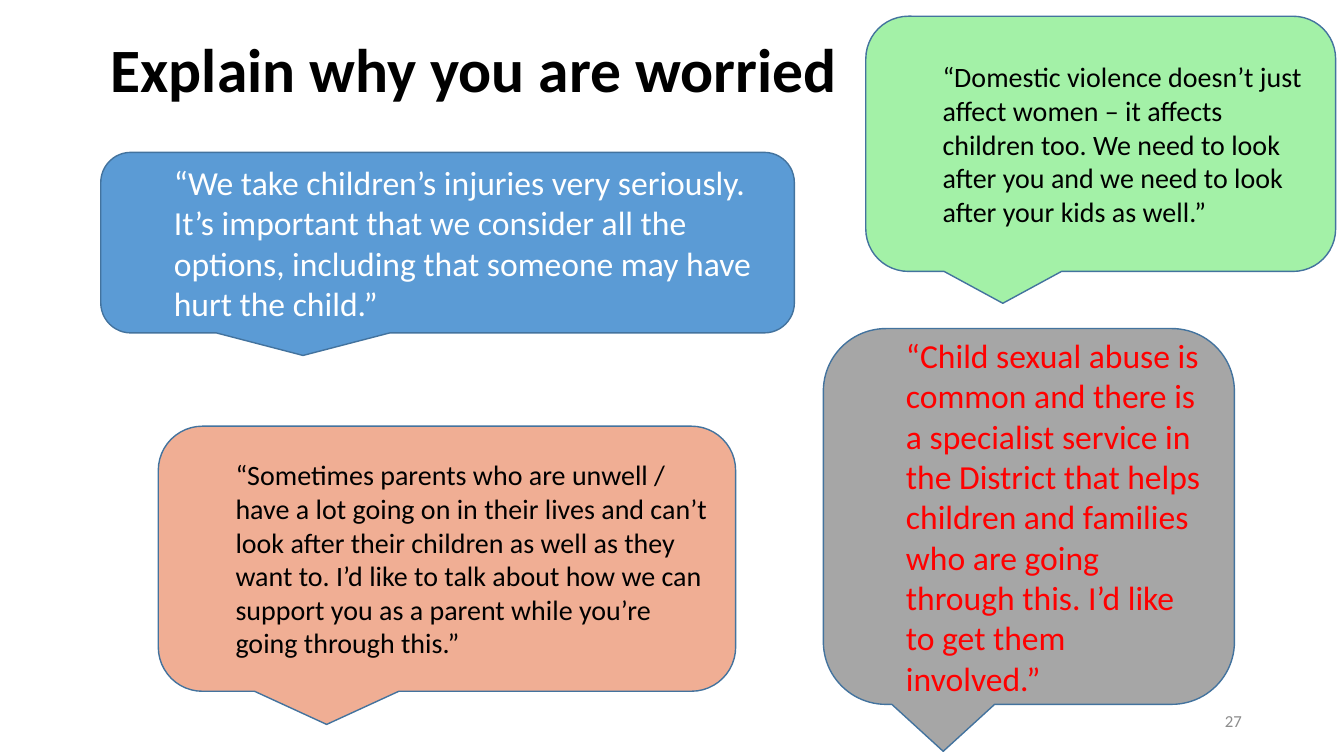
from dataclasses import dataclass

from pptx import Presentation
from pptx.dml.color import RGBColor
from pptx.enum.shapes import MSO_SHAPE
from pptx.enum.text import MSO_ANCHOR, PP_ALIGN
from pptx.slide import Slide
from pptx.util import Cm, Pt

CALLOUT = MSO_SHAPE.ROUNDED_RECTANGULAR_CALLOUT
MIDDLE = MSO_ANCHOR.MIDDLE
LEFT, RIGHT = PP_ALIGN.LEFT, PP_ALIGN.RIGHT

FONT = "Calibri"
INDENT = Cm(1.37)
COLORS = {
    "black": "000000",
    "white": "FFFFFF",
    "red": "FF0000",
    "number": "8C8C8C",
    "edge": "43739E",
    "blue": "5B9BD5",
    "green": "A3F1A7",
    "salmon": "F0AE94",
    "grey": "A6A6A6",
}


@dataclass
class Label:
    text: str
    box: tuple[float, float, float, float]
    size: int
    ink: str
    bold: bool = False
    align: PP_ALIGN = LEFT
    spacing: float = 1.0


@dataclass
class Quote(Label):
    fill: str = "blue"


LABELS = [
    Label("Explain why you are worried", (2.54, 0, 29.21, 3.68), 44, "black",
          bold=True, spacing=0.9),
    Label("27", (23.93, 17.65, 7.62, 1.02), 12, "number", align=RIGHT),
]

QUOTES = [
    Quote("“We take children’s injuries very seriously. It’s important that "
          "we consider all the options, including that someone may have hurt "
          "the child.”",
          (2.54, 3.84, 17.48, 4.55), 24, "white", fill="blue"),
    Quote("“Domestic violence doesn’t just affect women – it affects children "
          "too. We need to look after you and we need to look after your kids "
          "as well.”",
          (21.82, 0.41, 11.84, 6.43), 20, "black", fill="green"),
    Quote("“Sometimes parents who are unwell / have a lot going on in their "
          "lives and can’t look after their children as well as they want to. "
          "I’d like to talk about how we can support you as a parent while "
          "you’re going through this.”",
          (3.99, 10.74, 14.55, 6.68), 20, "black", fill="salmon"),
    Quote("“Child sexual abuse is common and there is a specialist service in "
          "the District that helps children and families who are going "
          "through this. I’d like to get them involved.”",
          (20.75, 8.28, 10.36, 9.47), 24, "red", fill="grey"),
]


def color(name: str) -> RGBColor:
    return RGBColor.from_string(COLORS[name])


def write(shape, label: Label) -> None:
    frame = shape.text_frame
    frame.word_wrap = True
    frame.vertical_anchor = MIDDLE
    para = frame.paragraphs[0]
    para.text = label.text
    para.alignment = label.align
    para.line_spacing = label.spacing
    para.font.name = FONT
    para.font.size = Pt(label.size)
    para.font.bold = label.bold
    para.font.color.rgb = color(label.ink)


def add_label(slide: Slide, label: Label) -> None:
    write(slide.shapes.add_textbox(*map(Cm, label.box)), label)


def add_quote(slide: Slide, quote: Quote) -> None:
    shape = slide.shapes.add_shape(CALLOUT, *map(Cm, quote.box))
    shape.shadow.inherit = False
    shape.fill.solid()
    shape.fill.fore_color.rgb = color(quote.fill)
    shape.line.color.rgb = color("edge")
    shape.line.width = Pt(1)
    write(shape, quote)
    props = shape.text_frame.paragraphs[0]._p.get_or_add_pPr()
    props.set("marL", str(INDENT))
    props.set("indent", "0")


def main() -> None:
    deck = Presentation()
    deck.slide_width, deck.slide_height = Cm(33.87), Cm(19.05)
    slide = deck.slides.add_slide(deck.slide_layouts[6])
    for label in LABELS:
        add_label(slide, label)
    for quote in QUOTES:
        add_quote(slide, quote)
    deck.save("out.pptx")


if __name__ == "__main__":
    main()
